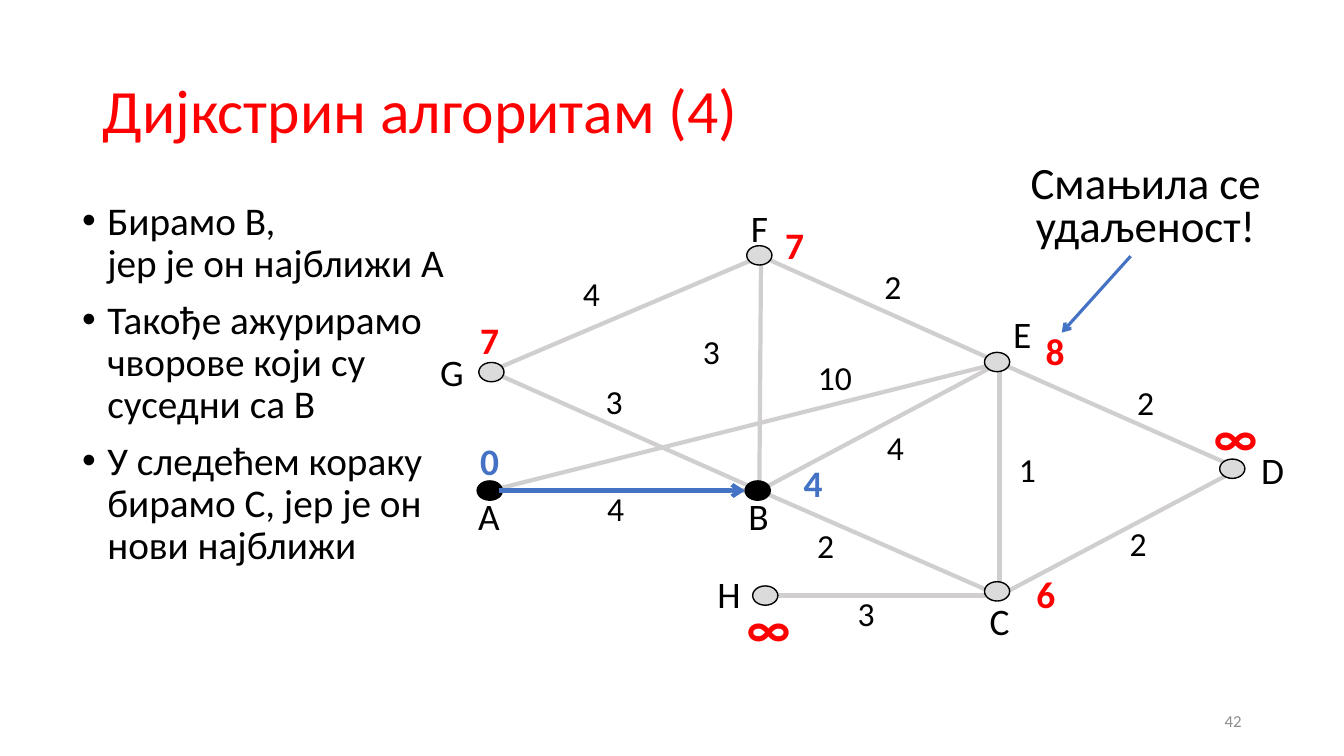
from dataclasses import dataclass

from lxml.etree import SubElement
from pptx import Presentation
from pptx.dml.color import RGBColor
from pptx.enum.shapes import MSO_CONNECTOR as Connector, MSO_SHAPE as Preset
from pptx.enum.text import MSO_ANCHOR as Anchor, PP_ALIGN as Align
from pptx.oxml.ns import qn
from pptx.slide import Slide
from pptx.text.text import TextFrame
from pptx.util import Inches, Pt

BLACK = RGBColor(0x00, 0x00, 0x00)
RED = RGBColor(0xFF, 0x00, 0x00)
BLUE = RGBColor(0x44, 0x72, 0xC4)
EDGE_GREY = RGBColor(0xD0, 0xCE, 0xCE)
NODE_GREY = RGBColor(0xDB, 0xDB, 0xDB)
NUMBER_GREY = RGBColor(0x8C, 0x8C, 0x8C)

FONT = "Calibri"
SLIDE_WIDTH, SLIDE_HEIGHT = Inches(13.33), Inches(7.5)
COLUMNS, ROWS = 160, 90
NODE_SIZE = (3, 2.3)

Point = tuple[float, float]
Box = tuple[float, float, float, float]


@dataclass(frozen=True)
class Style:
    size: float
    color: RGBColor = BLACK
    bold: bool = False
    align: Align = Align.CENTER
    anchor: Anchor = Anchor.MIDDLE
    line_spacing: float = 1.0
    space_before: float = 0


@dataclass(frozen=True)
class Node:
    center: Point
    joint: Point  # where the edges meet
    name_at: Point
    distance: str
    distance_at: Point
    visited: bool = False


@dataclass(frozen=True)
class Edge:
    start: str
    end: str
    weight: str
    weight_at: Point


NODES = {
    "A": Node((58.3, 58.4), (58.4, 58.4), (58.2, 61.4), "0", (58.3, 54.8), True),
    "B": Node((90.2, 58.4), (90.4, 58.4), (90.3, 61.4), "4", (96.8, 57.5), True),
    "C": Node((118.7, 70.4), (119, 70.9), (119, 73.9), "6", (124.5, 70.7)),
    "D": Node((146.7, 55.8), (147.5, 55.8), (151.5, 55.9), "∞", (146.8, 51.9)),
    "E": Node((118.7, 43.1), (119, 43.2), (121.7, 39.7), "8", (125.6, 41.7)),
    "F": Node((90.4, 30.4), (90.6, 30.5), (90.4, 27.1), "7", (94.6, 29.1)),
    "G": Node((58.5, 44.3), (58.4, 44.2), (53.8, 44.2), "7", (58.3, 40.4)),
    "H": Node((91.1, 70.9), (90.4, 70.9), (86.8, 70.7), "∞", (91.2, 74.6)),
}

EDGES = [
    Edge("A", "B", "4", (73.3, 60.5)),
    Edge("B", "C", "2", (98.3, 64.9)),
    Edge("C", "E", "1", (122.3, 55.8)),
    Edge("B", "E", "4", (106.6, 53.2)),
    Edge("A", "E", "10", (99.4, 44.9)),
    Edge("B", "F", "3", (84.7, 41.8)),
    Edge("B", "G", "3", (73.1, 47.8)),
    Edge("G", "F", "4", (70.4, 34.9)),
    Edge("F", "E", "2", (106.3, 34.1)),
    Edge("E", "D", "2", (136.4, 47.9)),
    Edge("C", "D", "2", (135.5, 64.7)),
    Edge("C", "H", "3", (103.1, 73)),
]

STEPS = [
    ["Бирамо B, ", "јер је он најближи А"],
    ["Такође ажурирамо", "чворове који су ", "суседни са B"],
    ["У следећем кораку", "бирамо C, јер је он", "нови најближи"],
]

TITLE = Style(44, RED, align=Align.LEFT, line_spacing=0.9)
STEP = Style(28, align=Align.LEFT, anchor=Anchor.TOP, line_spacing=0.9, space_before=10)
CALLOUT = Style(32, anchor=Anchor.TOP, line_spacing=0.8)
PAGE_NUMBER = Style(12, NUMBER_GREY, align=Align.RIGHT)
NODE_NAME = Style(26.7)
WEIGHT = Style(24)


def across(columns: float) -> int:
    return round(SLIDE_WIDTH * columns / COLUMNS)


def down(rows: float) -> int:
    return round(SLIDE_HEIGHT * rows / ROWS)


def on_grid(box: Box) -> tuple[int, int, int, int]:
    left, top, width, height = box
    return across(left), down(top), across(width), down(height)


def around(center: Point, width: float, height: float) -> Box:
    return center[0] - width / 2, center[1] - height / 2, width, height


def add_text(slide: Slide, box: Box, paragraphs: list[list[str]], style: Style) -> TextFrame:
    """Add a text box; each paragraph is a list of its lines."""
    frame = slide.shapes.add_textbox(*on_grid(box)).text_frame
    frame.word_wrap = True
    frame.vertical_anchor = style.anchor
    for index, lines in enumerate(paragraphs):
        paragraph = frame.add_paragraph() if index else frame.paragraphs[0]
        paragraph.alignment = style.align
        paragraph.line_spacing = style.line_spacing
        paragraph.space_before = Pt(style.space_before)
        for number, line in enumerate(lines):
            if number:
                paragraph.add_line_break()
            run = paragraph.add_run()
            run.text = line
            run.font.name = FONT
            run.font.size = Pt(style.size)
            run.font.bold = style.bold
            run.font.color.rgb = style.color
    return frame


def add_label(slide: Slide, center: Point, text: str, style: Style) -> None:
    frame = add_text(slide, around(center, 7, 8), [[text]], style)
    frame.word_wrap = False


def add_bullets(frame: TextFrame) -> None:
    for paragraph in frame.paragraphs:
        properties = paragraph._p.get_or_add_pPr()
        properties.set("marL", str(Inches(0.25)))
        properties.set("indent", str(-Inches(0.25)))
        SubElement(properties, qn("a:buFont"), typeface="Arial")
        SubElement(properties, qn("a:buChar"), char="•")


def add_line(slide: Slide, start: Point, end: Point, color: RGBColor,
             width: float = 3, arrow: bool = False) -> None:
    line = slide.shapes.add_connector(
        Connector.STRAIGHT, across(start[0]), down(start[1]), across(end[0]), down(end[1]))
    line.line.color.rgb = color
    line.line.width = Pt(width)
    if arrow:
        SubElement(line.line._get_or_add_ln(), qn("a:tailEnd"), type="arrow")
    SubElement(line._element.spPr, qn("a:effectLst"))


def add_node(slide: Slide, node: Node) -> None:
    oval = slide.shapes.add_shape(Preset.OVAL, *on_grid(around(node.center, *NODE_SIZE)))
    oval.shadow.inherit = False
    oval.fill.solid()
    oval.fill.fore_color.rgb = BLACK if node.visited else NODE_GREY
    oval.line.color.rgb = BLACK
    oval.line.width = Pt(1)


def add_graph(slide: Slide) -> None:
    for edge in EDGES:
        add_line(slide, NODES[edge.start].joint, NODES[edge.end].joint, EDGE_GREY)
    for name, node in NODES.items():
        add_node(slide, node)
        add_label(slide, node.name_at, name, NODE_NAME)
        size = 37.3 if node.distance == "∞" else 26.7
        color = BLUE if node.visited else RED
        add_label(slide, node.distance_at, node.distance, Style(size, color, bold=True))
    for edge in EDGES:
        add_label(slide, edge.weight_at, edge.weight, WEIGHT)


def main() -> None:
    deck = Presentation()
    deck.slide_width, deck.slide_height = SLIDE_WIDTH, SLIDE_HEIGHT
    slide = deck.slides.add_slide(deck.slide_layouts[6])
    add_text(slide, (11, 4.8, 138, 17.4), [["Дијкстрин алгоритам (4)"]], TITLE)
    add_bullets(add_text(slide, (8.6, 23.4, 50.8, 57.1), STEPS, STEP))
    add_graph(slide)
    add_line(slide, (59.4, 58.4), (88.7, 58.4), BLUE, arrow=True)
    add_line(slide, (134.6, 30.5), (126.4, 39.6), BLUE, 2.25, arrow=True)
    add_text(slide, (114.1, 19.1, 44.6, 11.5), [["Смањила се удаљеност!"]], CALLOUT)
    add_text(slide, (113, 83.4, 36, 4.8), [["42"]], PAGE_NUMBER)
    deck.save("out.pptx")


if __name__ == "__main__":
    main()
